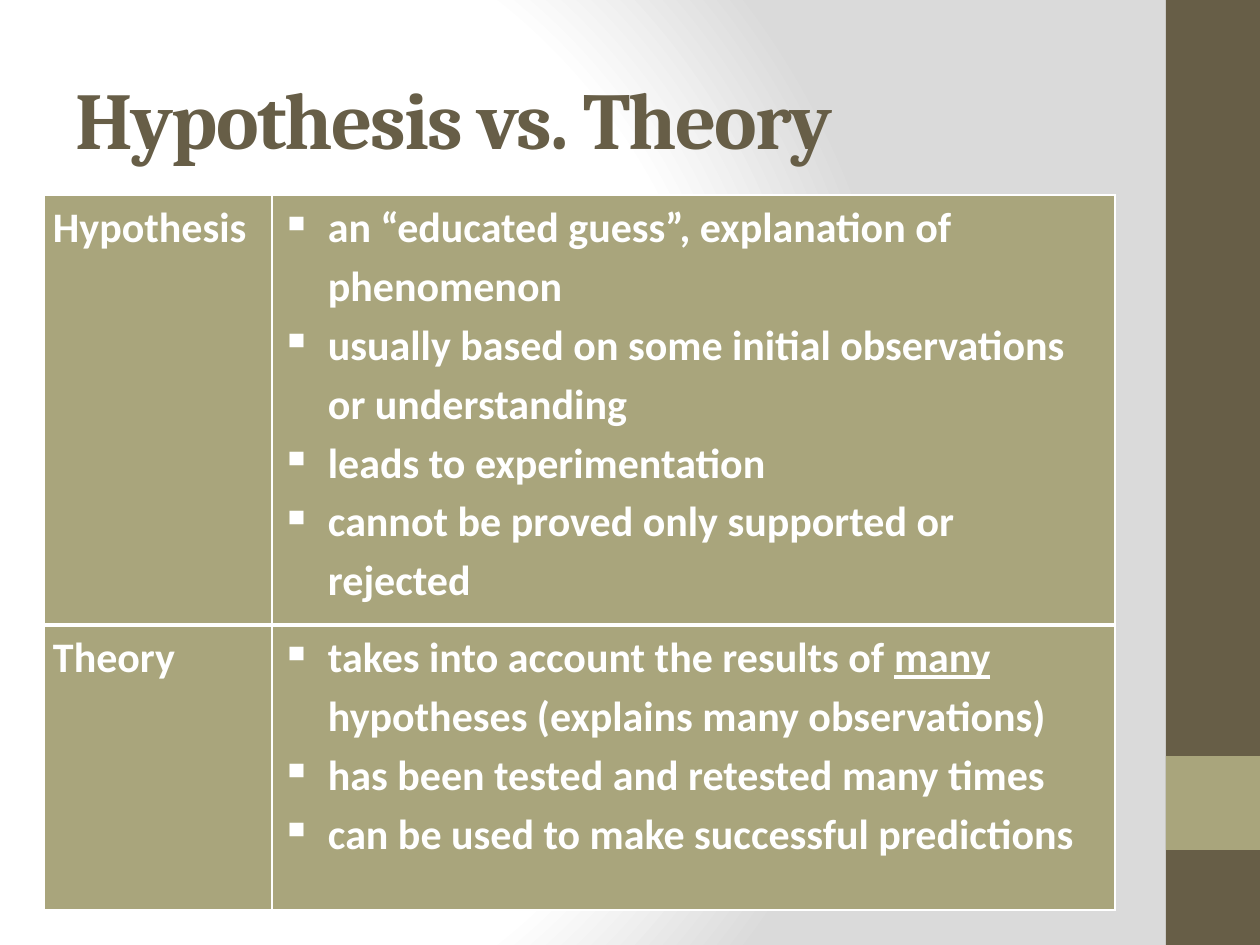
from lxml import etree
from pptx import Presentation
from pptx.dml.color import RGBColor
from pptx.enum.shapes import MSO_SHAPE
from pptx.enum.text import MSO_ANCHOR, PP_ALIGN
from pptx.oxml import parse_xml
from pptx.oxml.ns import nsdecls, qn

RECT = MSO_SHAPE.RECTANGLE
LEFT = PP_ALIGN.LEFT
MIDDLE = MSO_ANCHOR.MIDDLE
SCALE = 914400 / 126
WHITE, BROWN, OLIVE, GRAY = "FFFFFF", "675E47", "A9A57C", "DADADA"


def emu(px):
    return round(px * SCALE)


def color(code):
    return RGBColor.from_string(code)


class Deck:
    """Holds the style and the current slide, and draws each kind of element."""

    head, body = "Cambria", "Calibri"
    pad, hang, tab = 9, 47, 32

    def __init__(self, width, height):
        self.prs = Presentation()
        self.prs.slide_width, self.prs.slide_height = emu(width), emu(height)
        self.slide = self.prs.slides.add_slide(self.prs.slide_layouts[5])

    def glow(self, stops):
        self.slide.background.fill.solid()
        props = self.slide._element.find(".//" + qn("p:bgPr"))
        marks = "".join(
            f'<a:gs pos="{pos * 1000}"><a:srgbClr val="{code}"/></a:gs>'
            for pos, code in stops)
        props.replace(props[0], parse_xml(
            f'<a:gradFill {nsdecls("a")} rotWithShape="1"><a:gsLst>{marks}</a:gsLst>'
            '<a:path path="circle"><a:fillToRect l="20000" t="50000" '
            'r="100000" b="50000"/></a:path></a:gradFill>'))

    def band(self, left, top, width, height, fill):
        shape = self.slide.shapes.add_shape(RECT, *map(emu, (left, top, width, height)))
        shape.shadow.inherit = False
        shape.fill.solid()
        shape.fill.fore_color.rgb = color(fill)
        shape.line.fill.background()

    def font(self, para, name, size, code):
        font = para.font
        font.name, font.size, font.bold = name, size * 12700, True
        font.color.rgb = color(code)
        return font

    def title(self, text, left, top, width, height):
        box = self.slide.shapes.title
        box.left, box.top, box.width, box.height = map(emu, (left, top, width, height))
        frame = box.text_frame
        frame.text, frame.vertical_anchor = text, MIDDLE
        para = frame.paragraphs[0]
        para.alignment = LEFT
        self.font(para, self.head, 46, BROWN)._element.set("spc", "-100")

    def bullet(self, para):
        props = para._p.get_or_add_pPr()
        props.set("marL", str(emu(self.hang)))
        props.set("indent", str(-emu(self.hang)))
        etree.SubElement(props, qn("a:buChar"), char="▪")
        tabs = etree.SubElement(props, qn("a:tabLst"))
        etree.SubElement(tabs, qn("a:tab"), pos=str(emu(self.tab)), algn="l")

    def border(self, cell, sides):
        props = cell._tc.get_or_add_tcPr()
        for side, points in sides.items():
            props.append(parse_xml(
                f'<a:ln{side} {nsdecls("a")} w="{points * 12700}"><a:solidFill>'
                f'<a:srgbClr val="{WHITE}"/></a:solidFill></a:ln{side}>'))

    def cell(self, cell, items, listed, sides):
        self.border(cell, sides)
        cell.fill.solid()
        cell.fill.fore_color.rgb = color(OLIVE)
        cell.margin_left = cell.margin_right = emu(self.pad)
        cell.margin_top = cell.margin_bottom = 0
        frame = cell.text_frame
        for num, item in enumerate(items):
            para = frame.add_paragraph() if num else frame.paragraphs[0]
            if listed:
                self.bullet(para)
            para.line_spacing = 1.15
            self.font(para, self.body, 24, WHITE)
            for part, text in enumerate(item.split("_")):
                run = para.add_run()
                run.text = text
                if part % 2:
                    run.font.underline = True

    def table(self, left, top, cols, rows, data):
        area = map(emu, (left, top, sum(cols), sum(rows)))
        table = self.slide.shapes.add_table(len(rows), len(cols), *area).table
        table.first_row = table.horz_banding = False
        for col, width in zip(table.columns, cols):
            col.width = emu(width)
        last = len(rows) - 1
        for num, (term, points) in enumerate(data):
            table.rows[num].height = emu(rows[num])
            sides = {"L": 1, "R": 1, "T": 3 if num else 1, "B": 3 if num < last else 1}
            self.cell(table.cell(num, 0), [term], False, sides)
            self.cell(table.cell(num, 1), points, True, sides)


def main():
    deck = Deck(1260, 945)
    deck.glow([(0, WHITE), (75, WHITE), (100, GRAY)])
    deck.band(1166, 0, 94, 945, BROWN)
    deck.band(1166, 756, 94, 94, OLIVE)
    deck.title("Hypothesis vs. Theory", 63, 38, 1050, 158)
    deck.table(44, 195, [228, 843], [430, 285], [
        ("Hypothesis", [
            "an “educated guess”, explanation of phenomenon",
            "usually based on some initial observations or understanding",
            "leads to experimentation",
            "cannot be proved only supported or rejected"]),
        ("Theory", [
            "takes into account the results of _many_ hypotheses "
            "(explains many observations)",
            "has been tested and retested many times",
            "can be used to make successful predictions"]),
    ])
    deck.prs.save("out.pptx")


if __name__ == "__main__":
    main()
